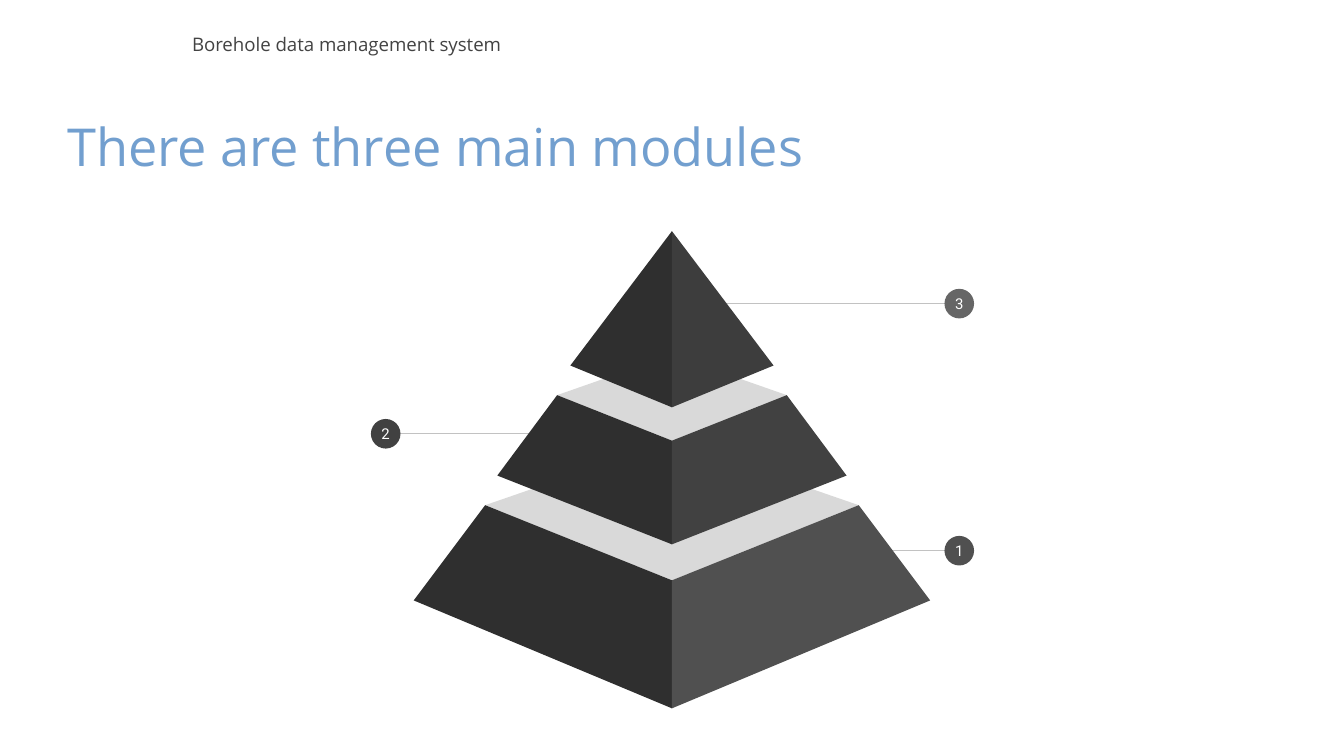
"""Build a slide with a three-tier pyramid of system modules."""
import pptx
import pptx.dml.color
import pptx.enum.shapes
import pptx.enum.text
import pptx.oxml.ns
import pptx.util
from lxml import etree

Cm = pptx.util.Cm
Align = pptx.enum.text.PP_ALIGN
Anchor = pptx.enum.text.MSO_ANCHOR


def paint(color_format, hex_color):
    color_format.rgb = pptx.dml.color.RGBColor.from_string(hex_color)


def write(shape, text, size, font, color, align, anchor, inset):
    frame = shape.text_frame
    frame.text = text
    settings = {"word_wrap": True, "auto_size": pptx.enum.text.MSO_AUTO_SIZE.NONE,
                "vertical_anchor": anchor}
    for side in ("left", "top", "right", "bottom"):
        settings[f"margin_{side}"] = Cm(inset)
    for name, value in settings.items():
        setattr(frame, name, value)
    para = frame.paragraphs[0]
    para.alignment = align
    span = para.runs[0]
    for name, value in {"size": pptx.util.Pt(size), "name": font, "bold": False}.items():
        setattr(span.font, name, value)
    paint(span.font.color, color)


deck = pptx.Presentation()
deck.slide_width = Cm(25.4)
deck.slide_height = Cm(14.29)
slide = deck.slides.add_slide(deck.slide_layouts[5])

header = slide.shapes.add_textbox(Cm(3.38), Cm(0.46), Cm(20.9), Cm(0.74))
write(header, "Borehole data management system", 10, "Open Sans", "434343",
      Align.LEFT, Anchor.MIDDLE, 0.25)

title = slide.shapes.title
for name, value in {"left": 1.02, "top": 1.9, "width": 23.52, "height": 1.98}.items():
    setattr(title, name, Cm(value))
write(title, "There are three main modules", 28, "Open Sans", "729FCF",
      Align.LEFT, Anchor.TOP, 0.25)

disc_size = 0.56
callouts = [
    ("1", 16.76, 18.13, 10.41, "505050"),
    ("2", 10.08, 7.29, 8.2, "414141"),
    ("3", 13.64, 18.13, 5.74, "666666"),
]
for number, line_start, disc_x, y, color in callouts:
    line = slide.shapes.add_connector(pptx.enum.shapes.MSO_CONNECTOR.STRAIGHT,
                                      Cm(line_start), Cm(y), Cm(disc_x), Cm(y))
    line.line.width = pptx.util.Pt(0.75)
    paint(line.line.color, "C2C2C2")
    etree.SubElement(line._element.spPr, pptx.oxml.ns.qn("a:effectLst"))
    disc = slide.shapes.add_shape(pptx.enum.shapes.MSO_SHAPE.OVAL,
                                  Cm(disc_x - disc_size / 2), Cm(y - disc_size / 2),
                                  Cm(disc_size), Cm(disc_size))
    disc.shadow.inherit = False
    disc.fill.solid()
    paint(disc.fill.fore_color, color)
    disc.line.fill.background()
    write(disc, number, 8, "Roboto", "FFFFFF", Align.CENTER, Anchor.MIDDLE, 0)

center = 12.7
tiers = [
    {"back": 8.33, "shoulder": (3.53, 9.55), "front": 10.97,
     "base": (4.88, 11.35), "tip": 13.39, "right_color": "505050"},
    {"back": 6.71, "shoulder": (2.17, 7.47), "front": 8.33,
     "base": (3.3, 8.99), "tip": 10.29, "right_color": "414141"},
    {"back": None, "shoulder": None, "front": 4.37,
     "base": (1.92, 6.91), "tip": 7.7, "right_color": "3D3D3D"},
]
for tier in tiers:
    faces = []
    side = [(0, tier["front"])]
    if tier["shoulder"]:
        half, y = tier["shoulder"]
        faces.append(("D9D9D9", [(-half, y), (0, tier["front"]), (half, y), (0, tier["back"])]))
        side.append(tier["shoulder"])
    side += [tier["base"], (0, tier["tip"])]
    for direction, color in ((-1, "2F2F2F"), (1, tier["right_color"])):
        faces.append((color, [(direction * x, y) for x, y in side]))
    for color, outline in faces:
        points = [(Cm(center + x), Cm(y)) for x, y in outline]
        builder = slide.shapes.build_freeform(*points[0])
        builder.add_line_segments(points[1:], close=True)
        face = builder.convert_to_shape()
        face.shadow.inherit = False
        face.fill.solid()
        paint(face.fill.fore_color, color)
        face.line.fill.background()

deck.save("out.pptx")
